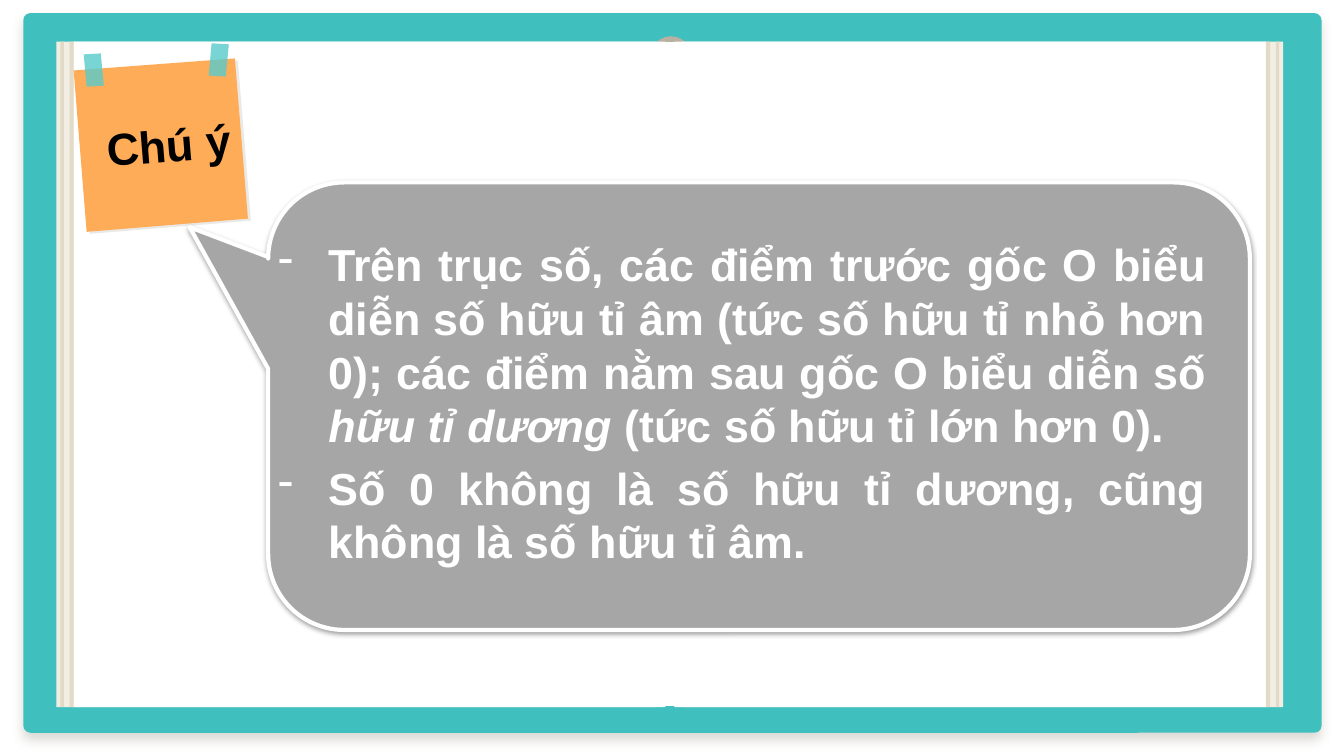
from lxml.etree import SubElement
from pptx import Presentation
from pptx.dml.color import RGBColor
from pptx.enum.shapes import MSO_SHAPE
from pptx.enum.text import PP_ALIGN
from pptx.oxml.ns import qn
from pptx.util import Inches, Pt

TEAL = RGBColor(0x40, 0xBF, 0xBF)
CREAM = RGBColor(0xF2, 0xEE, 0xE3)
SAND = RGBColor(0xE2, 0xDA, 0xC7)
STONE = RGBColor(0xB8, 0xB1, 0xA1)
TAUPE = RGBColor(0x91, 0x8C, 0x7F)
PEACH = RGBColor(0xFF, 0xAC, 0x58)
MINT = RGBColor(0x58, 0xCB, 0xCA)
GREY = RGBColor(0xA6, 0xA6, 0xA6)
WHITE = RGBColor(0xFF, 0xFF, 0xFF)
BLACK = RGBColor(0, 0, 0)

deck = Presentation()
deck.slide_width, deck.slide_height = Inches(13.33), Inches(7.5)
slide = deck.slides.add_slide(deck.slide_layouts[6])

# Grid of 100 columns by 100 rows
COL, ROW = deck.slide_width / 100, deck.slide_height / 100


def paint(shape, fill, alpha=100, line=0, shade=None):
    """Fill a shape; shade is colour, alpha, blur and drop of its shadow."""
    shape.fill.solid()
    shape.fill.fore_color.rgb = fill
    if alpha < 100:
        tint = shape._element.spPr.find(".//" + qn("a:srgbClr"))
        SubElement(tint, qn("a:alpha"), val=str(alpha * 1000))
    if line:
        shape.line.color.rgb = WHITE
        shape.line.width = Pt(line)
    else:
        shape.line.fill.background()
    shape.shadow.inherit = False
    if shade:
        tone, depth, blur, drop = shade
        glow = SubElement(shape._element.spPr.find(qn("a:effectLst")), qn("a:outerShdw"),
                          blurRad=str(Pt(blur)), dist=str(Pt(drop)), dir="5400000",
                          algn="t", rotWithShape="0")
        tint = SubElement(glow, qn("a:srgbClr"), val=str(tone))
        SubElement(tint, qn("a:alpha"), val=str(depth * 1000))


def write(paras, at, color=WHITE, turn=0, dash=False):
    """Add a text box; each paragraph is a list of (text, italic) runs."""
    x, y, w, h = at
    box = slide.shapes.add_textbox(int(x * COL), int(y * ROW), int(w * COL), int(h * ROW))
    box.rotation = turn
    frame = box.text_frame
    frame.word_wrap = True
    for i, runs in enumerate(paras):
        para = frame.paragraphs[0] if i == 0 else frame.add_paragraph()
        if dash:
            para.alignment = PP_ALIGN.JUSTIFY
            para.space_after = Pt(6)
            props = para._p.get_or_add_pPr()
            props.set("marL", str(Inches(0.5)))
            props.set("indent", str(-Inches(0.5)))
            SubElement(props, qn("a:buFontTx"))
            SubElement(props, qn("a:buChar"), char="-")
        for words, slant in runs:
            run = para.add_run()
            run.text = words
            font = run.font
            font.name, font.size, font.bold = "Arial", Pt(32), True
            font.italic = slant
            font.color.rgb = color


# Frame and ring
RECT, ROUND, OVAL = MSO_SHAPE.RECTANGLE, MSO_SHAPE.ROUNDED_RECTANGLE, MSO_SHAPE.OVAL
parts = [
    (ROUND, 1.73, 1.73, 96.6, 95.2, TEAL, {"shade": (TAUPE, 32, 7.9, 5.2)}),
    (RECT, 47.03, 1.73, 5.93, 95.2, TEAL, {}),
    (OVAL, 48.38, 4.8, 3.08, 5.47, STONE, {}),
]

# Pages and their edges, mirrored about the spine
SPAN = 99.68
for x, w, color in [(4.2, 44.7, CREAM), (5.48, 44.03, WHITE),
                    (4.5, 0.25, SAND), (5.18, 0.3, SAND)]:
    for left in (x, SPAN - x - w):
        parts.append((RECT, left, 5.5, w, 88.05, color, {}))

# Blank strip over the spine
parts.append((RECT, 43.73, 5.73, 12.83, 87.47, WHITE, {"line": 2}))

for kind, x, y, w, h, color, look in parts:
    shape = slide.shapes.add_shape(kind, int(x * COL), int(y * ROW), int(w * COL), int(h * ROW))
    if kind == ROUND:
        shape.adjustments[0] = 0.01
    paint(shape, color, **look)

# Sticky note with its shadow and two tapes
note = [(17.48, 7.73), (5.48, 9.33), (6.45, 30.67), (18.45, 28.93)]
under = [(x + 0.22, y + 0.27) for x, y in note]
tapes = [
    [(15.75, 5.73), (15.53, 10), (16.8, 10.13), (17.03, 5.87)],
    [(6.23, 7.2), (6.45, 11.47), (7.73, 11.33), (7.5, 7.07)],
]
for form, color, alpha in [(under, TAUPE, 19), (note, PEACH, 100),
                           (tapes[0], MINT, 80), (tapes[1], MINT, 80)]:
    spots = [(int(x * COL), int(y * ROW)) for x, y in form]
    path = slide.shapes.build_freeform(*spots[0])
    path.add_line_segments(spots[1:])
    paint(path.convert_to_shape(), color, alpha)

write([[("Chú ý", False)]], (7.2, 14.8, 11.18, 8.53), color=BLACK, turn=355.4)

# Speech bubble
bubble = slide.shapes.add_shape(MSO_SHAPE.ROUNDED_RECTANGULAR_CALLOUT, int(19.95 * COL),
                                int(24.13 * ROW), int(73.05 * COL), int(59.2 * ROW))
for i, value in enumerate((-0.58, -0.4, 0.17)):
    bubble.adjustments[i] = value
paint(bubble, GREY, line=3, shade=(BLACK, 38, 3.1, 1.6))

write([
    [("Trên trục số, các điểm trước gốc O biểu diễn số hữu tỉ âm (tức số hữu tỉ nhỏ hơn 0); "
      "các điểm nằm sau gốc O biểu diễn số ", False),
     ("hữu tỉ dương ", True),
     ("(tức số hữu tỉ lớn hơn 0).", False)],
    [("Số 0 không là số hữu tỉ dương, cũng không là số hữu tỉ âm.", False)],
], (19.95, 30.67, 70.58, 45.6), dash=True)

deck.save("out.pptx")
